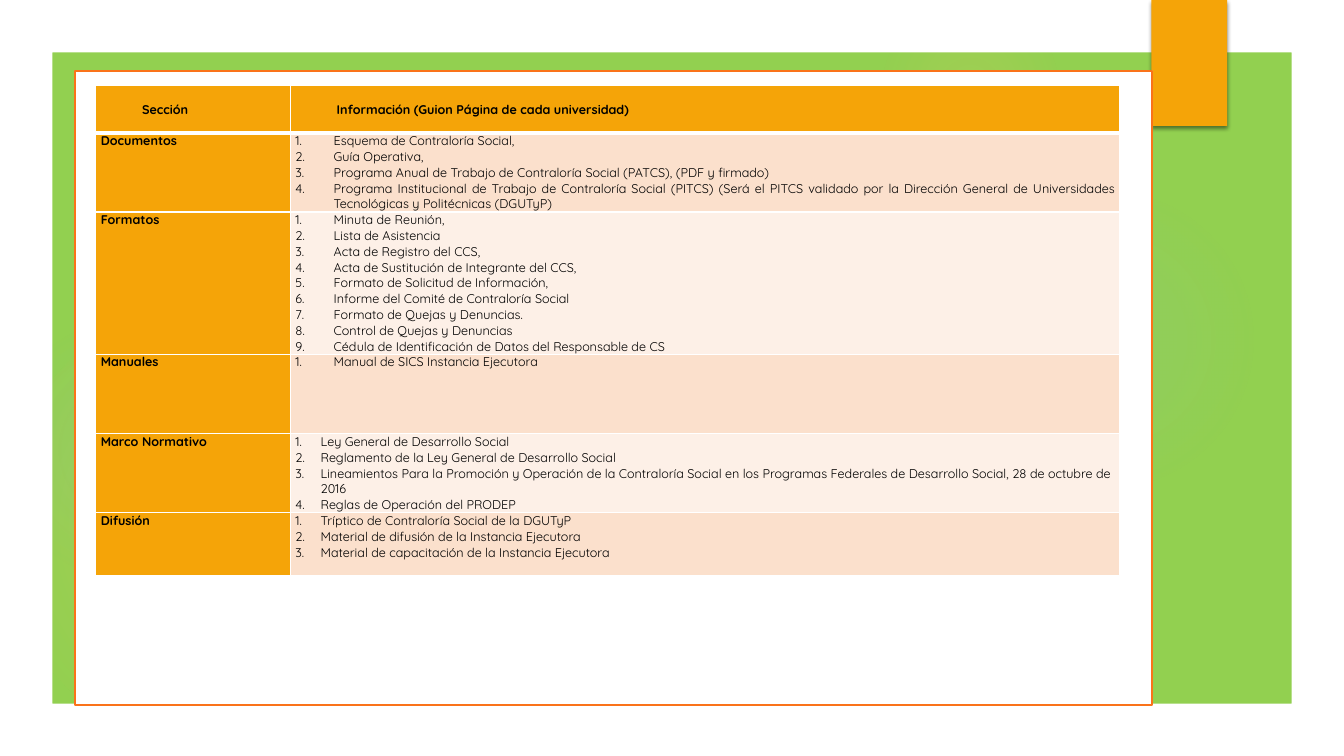
from dataclasses import dataclass

from lxml.etree import SubElement
from pptx import Presentation
from pptx.dml.color import RGBColor
from pptx.enum.shapes import MSO_SHAPE as Preset
from pptx.enum.text import MSO_ANCHOR as Anchor, PP_ALIGN as Align
from pptx.oxml.ns import qn
from pptx.util import Pt

EMU_PER_PX = 9144  # 100 px to the inch


@dataclass(frozen=True)
class Theme:
    green: str = "92D050"
    amber: str = "F5A408"
    orange: str = "FA731A"
    white: str = "FFFFFF"
    black: str = "000000"
    blue_glow: str = "8EBBD2"
    amber_glow: str = "FAC96A"
    bands: tuple = ("FBE0CC", "FDF0E7")
    font: str = "Quicksand"
    text_size: int = 9
    panel_line: float = 1.5
    cell_line: int = 1
    header_line: int = 3


THEME = Theme()

# left, top, diameter, colour, centre and middle opacity, position where it fades out
GLOWS = [
    (941, 183, 308, THEME.blue_glow, 7, 6, 69),
    (875, 0, 175, THEME.amber_glow, 14, 7, 73),
    (0, 317, 258, THEME.blue_glow, 8, 8, 72),
    (0, 292, 458, THEME.amber_glow, 11, 10, 75),
]

HEADERS = ("Sección", "Información (Guion Página de cada universidad)")
HEADER_HEIGHT = 47
HEADER_INDENT = 41
COLUMN_WIDTHS = (193, 822)
WIDE, NARROW = 38, 25

# name, row height, list indent, alignment, items
SECTIONS = [
    ("Documentos", 78, WIDE, Align.JUSTIFY, [
        "Esquema de Contraloría Social,",
        "Guía Operativa,",
        "Programa Anual de Trabajo de Contraloría Social (PATCS), (PDF y firmado)",
        "Programa Institucional de Trabajo de Contraloría Social (PITCS) (Será el PITCS validado "
        "por la Dirección General de Universidades Tecnológicas y Politécnicas (DGUTyP)",
    ]),
    ("Formatos", 141, WIDE, Align.JUSTIFY, [
        "Minuta de Reunión,",
        "Lista de Asistencia",
        "Acta de Registro del CCS,",
        "Acta de Sustitución de Integrante del CCS,",
        "Formato de Solicitud de Información,",
        "Informe del Comité de Contraloría Social",
        "Formato de Quejas y Denuncias.",
        "Control de Quejas y Denuncias",
        "Cédula de Identificación de Datos del Responsable de CS",
    ]),
    ("Manuales", 79, WIDE, Align.JUSTIFY, ["Manual de SICS Instancia Ejecutora"]),
    ("Marco Normativo", 78, NARROW, Align.LEFT, [
        "Ley General de Desarrollo Social",
        "Reglamento de la Ley General de Desarrollo Social",
        "Lineamientos Para la Promoción y Operación de la Contraloría Social en los Programas "
        "Federales de Desarrollo Social, 28 de octubre de 2016",
        "Reglas de Operación del PRODEP",
    ]),
    ("Difusión", 62, NARROW, Align.LEFT, [
        "Tríptico de Contraloría Social de la DGUTyP",
        "Material de difusión de la Instancia Ejecutora",
        "Material de capacitación de la Instancia Ejecutora",
    ]),
]


def px(length):
    return length * EMU_PER_PX


def rgb(colour):
    return RGBColor.from_string(colour)


def add_colour(parent, colour, opacity=100):
    element = SubElement(parent, qn("a:srgbClr"), val=colour)
    SubElement(element, qn("a:alpha"), val=str(opacity * 1000))


def add_block(slide, preset, left, top, width, height, fill, line=None):
    shape = slide.shapes.add_shape(preset, px(left), px(top), px(width), px(height))
    shape.shadow.inherit = False
    shape.fill.solid()
    shape.fill.fore_color.rgb = rgb(fill)
    if line:
        shape.line.color.rgb = rgb(line)
        shape.line.width = Pt(THEME.panel_line)
    else:
        shape.line.fill.background()
    return shape


def add_glow(slide, left, top, diameter, colour, centre, middle, fade):
    """Add a circle whose colour fades out from its centre."""
    glow = add_block(slide, Preset.OVAL, left, top, diameter, diameter, colour)
    properties = glow.element.spPr
    solid = properties.find(qn("a:solidFill"))
    gradient = SubElement(properties, qn("a:gradFill"))
    stops = SubElement(gradient, qn("a:gsLst"))
    for position, opacity in ((0, centre), (36, middle), (fade, 0)):
        add_colour(SubElement(stops, qn("a:gs"), pos=str(position * 1000)), colour, opacity)
    circle = SubElement(gradient, qn("a:path"), path="circle")
    SubElement(circle, qn("a:fillToRect"), l="50000", t="50000", r="50000", b="50000")
    properties.replace(solid, gradient)


def add_drop_shadow(shape):
    effects = shape.element.spPr.find(qn("a:effectLst"))
    shadow = SubElement(effects, qn("a:outerShdw"), blurRad=str(Pt(3)), dist=str(Pt(2)),
                        dir="5400000", algn="ctr", rotWithShape="0")
    add_colour(shadow, THEME.black, 45)


def style_cell(cell, fill, top=THEME.cell_line, bottom=THEME.cell_line):
    properties = cell._tc.get_or_add_tcPr()
    side = THEME.cell_line
    for tag, width in (("a:lnL", side), ("a:lnR", side), ("a:lnT", top), ("a:lnB", bottom)):
        border = SubElement(properties, qn(tag), w=str(Pt(width)))
        add_colour(SubElement(border, qn("a:solidFill")), THEME.white)
    cell.fill.solid()
    cell.fill.fore_color.rgb = rgb(fill)
    cell.margin_left = cell.margin_right = px(5)
    cell.margin_top = cell.margin_bottom = 0


def write_cell(cell, lines, bold, indent=0, align=Align.JUSTIFY, numbered=False):
    cell.text_frame.text = "\n".join(lines)
    for paragraph in cell.text_frame.paragraphs:
        paragraph.alignment = align
        properties = paragraph._p.get_or_add_pPr()
        properties.set("marL", str(px(indent)))
        if numbered:
            properties.set("indent", str(px(-indent)))
            SubElement(properties, qn("a:buFont"), typeface="+mj-lt")
            SubElement(properties, qn("a:buAutoNum"), type="arabicPeriod")
        for run in paragraph.runs:
            run.font.name = THEME.font
            run.font.size = Pt(THEME.text_size)
            run.font.bold = bold
            run.font.color.rgb = rgb(THEME.black)


def add_section_table(slide, left, top):
    heights = [HEADER_HEIGHT] + [section[1] for section in SECTIONS]
    table = slide.shapes.add_table(len(heights), len(COLUMN_WIDTHS), px(left), px(top),
                                   px(sum(COLUMN_WIDTHS)), px(sum(heights))).table
    table.first_row = table.horz_banding = False
    for column, width in zip(table.columns, COLUMN_WIDTHS):
        column.width = px(width)
    for row, height in zip(table.rows, heights):
        row.height = px(height)

    for cell, header in zip(table.rows[0].cells, HEADERS):
        style_cell(cell, THEME.amber, bottom=THEME.header_line)
        cell.vertical_anchor = Anchor.MIDDLE
        write_cell(cell, [header], True, HEADER_INDENT)

    for index, (name, _, indent, align, items) in enumerate(SECTIONS):
        name_cell, items_cell = table.rows[index + 1].cells
        line_above = THEME.cell_line if index else THEME.header_line
        style_cell(name_cell, THEME.amber, top=line_above)
        style_cell(items_cell, THEME.bands[index % 2], top=line_above)
        write_cell(name_cell, [name], True)
        write_cell(items_cell, items, False, indent, align, numbered=True)


def main():
    presentation = Presentation()
    presentation.slide_width, presentation.slide_height = px(1333), px(750)
    slide = presentation.slides.add_slide(presentation.slide_layouts[6])
    slide.background.fill.solid()
    slide.background.fill.fore_color.rgb = rgb(THEME.green)

    for glow in GLOWS:
        add_glow(slide, *glow)
    frame = add_block(slide, Preset.FRAME, 0, 0, 1333, 750, THEME.white)
    frame.adjustments[0] = 52 / 750
    tab = add_block(slide, Preset.RECTANGLE, 1142, 0, 75, 125, THEME.amber)
    add_drop_shadow(tab)
    add_block(slide, Preset.RECTANGLE, 74, 70, 1069, 629, THEME.white, THEME.orange)
    add_section_table(slide, 95, 85)
    presentation.save("out.pptx")


if __name__ == "__main__":
    main()
